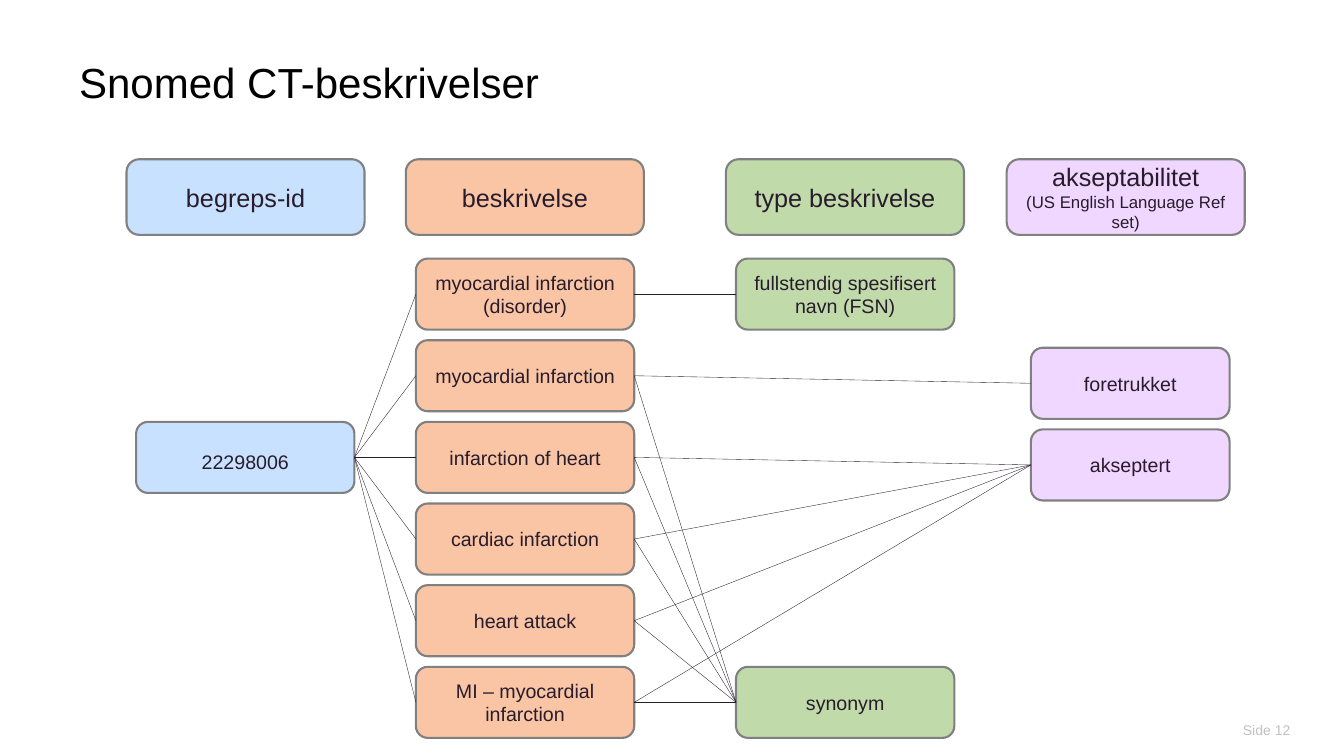
from dataclasses import dataclass

import pptx
from lxml import etree
from pptx.dml.color import RGBColor
from pptx.enum.shapes import MSO_CONNECTOR, MSO_SHAPE
from pptx.enum.text import MSO_ANCHOR, MSO_AUTO_SIZE, PP_ALIGN
from pptx.oxml.ns import qn
from pptx.util import Pt


@dataclass(frozen=True)
class Theme:
    font: str = "Arial"
    title: str = "000000"
    ink: str = "281C2C"
    outline: str = "808080"
    footer: str = "C1C1C1"
    blue: str = "C8E1FF"
    orange: str = "F9C5A5"
    green: str = "C1DAAA"
    purple: str = "EFD7FF"
    title_size: int = 60
    header_size: int = 36
    box_size: int = 28
    note_size: int = 24
    footer_size: int = 20


THEME = Theme()
LEFT, RIGHT = 1, 3
HEADER_TOP, HEADER_WIDTH, HEADER_HEIGHT = 227.5, 340, 108
BOX_WIDTH, NARROW_WIDTH, BOX_HEIGHT = 311.8, 283.7, 101.5
FIRST_ROW_TOP, ROW_PITCH = 369.4, 116.64

DESCRIPTIONS = [
    "myocardial infarction (disorder)",
    "myocardial infarction",
    "infarction of heart",
    "cardiac infarction",
    "heart attack",
    "MI – myocardial infarction",
]


def write_text(frame, text, size=THEME.box_size, color=THEME.ink,
               align=PP_ALIGN.CENTER, line_spacing=None):
    """Fill the first empty paragraph of the frame, or append a new one."""
    paragraph = frame.paragraphs[0] if not frame.text else frame.add_paragraph()
    paragraph.alignment = align
    paragraph.line_spacing = line_spacing
    run = paragraph.add_run()
    run.text = text
    run.font.name = THEME.font
    run.font.size = Pt(size)
    run.font.color.rgb = RGBColor.from_string(color)


def prepare_frame(frame):
    """Wrap, centre vertically and drop the insets of a plain text frame."""
    frame.word_wrap = True
    frame.auto_size = MSO_AUTO_SIZE.NONE
    frame.vertical_anchor = MSO_ANCHOR.MIDDLE
    frame.margin_left = frame.margin_right = 0
    frame.margin_top = frame.margin_bottom = 0


def add_title(slide, text):
    title = slide.shapes.title
    title.left, title.top = Pt(113), Pt(55.4)
    title.width, title.height = Pt(1698.5), Pt(131.8)
    prepare_frame(title.text_frame)
    write_text(title.text_frame, text, size=THEME.title_size, color=THEME.title,
               align=PP_ALIGN.LEFT, line_spacing=0.9)


def add_page_label(slide, text):
    label = slide.shapes.add_textbox(Pt(1730), Pt(1029), Pt(113), Pt(28.8))
    prepare_frame(label.text_frame)
    write_text(label.text_frame, text, size=THEME.footer_size,
               color=THEME.footer, align=PP_ALIGN.RIGHT)


def add_box(slide, text, left, top, fill, width=BOX_WIDTH, height=BOX_HEIGHT,
            size=THEME.box_size):
    box = slide.shapes.add_shape(MSO_SHAPE.ROUNDED_RECTANGLE, Pt(left), Pt(top),
                                 Pt(width), Pt(height))
    box.shadow.inherit = False
    box.fill.solid()
    box.fill.fore_color.rgb = RGBColor.from_string(fill)
    box.line.color.rgb = RGBColor.from_string(THEME.outline)
    box.line.width = Pt(3)
    box.text_frame.word_wrap = True
    box.text_frame.vertical_anchor = MSO_ANCHOR.MIDDLE
    write_text(box.text_frame, text, size=size)
    return box


def add_header(slide, text, left, fill):
    return add_box(slide, text, left, HEADER_TOP, fill, width=HEADER_WIDTH,
                   height=HEADER_HEIGHT, size=THEME.header_size)


def connect(slide, source, target, width=0.5):
    """Join the right side of source to the left side of target."""
    line = slide.shapes.add_connector(MSO_CONNECTOR.STRAIGHT, 0, 0, 0, 0)
    line.begin_connect(source, RIGHT)
    line.end_connect(target, LEFT)
    line.line.color.rgb = RGBColor.from_string(THEME.ink)
    line.line.width = Pt(width)
    properties = line._element.find(qn("p:spPr"))
    etree.SubElement(properties, qn("a:effectLst"))


def main():
    presentation = pptx.Presentation()
    presentation.slide_width, presentation.slide_height = Pt(1919.5), Pt(1080)
    slide = presentation.slides.add_slide(presentation.slide_layouts[5])
    add_title(slide, "Snomed CT-beskrivelser")
    add_page_label(slide, "Side 12")

    add_header(slide, "begreps-id", 180.7, THEME.blue)
    add_header(slide, "beskrivelse", 579.6, THEME.orange)
    add_header(slide, "type beskrivelse", 1036.8, THEME.green)
    acceptability = add_header(slide, "akseptabilitet", 1437.8, THEME.purple)
    write_text(acceptability.text_frame, "(US English Language Ref set)",
               size=THEME.note_size)

    row_tops = [FIRST_ROW_TOP + row * ROW_PITCH for row in range(len(DESCRIPTIONS))]
    concept = add_box(slide, "22298006", 194.4, row_tops[2], THEME.blue)
    concept.text_frame.margin_top = Pt(15)
    descriptions = [add_box(slide, text, 594, top, THEME.orange)
                    for text, top in zip(DESCRIPTIONS, row_tops)]
    full_name = add_box(slide, "fullstendig spesifisert navn (FSN)", 1051.2,
                        row_tops[0], THEME.green)
    synonym = add_box(slide, "synonym", 1051.2, 952.6, THEME.green)
    preferred, accepted = [
        add_box(slide, text, 1472.4, 496.8 + row * ROW_PITCH, THEME.purple,
                width=NARROW_WIDTH)
        for row, text in enumerate(["foretrukket", "akseptert"])
    ]

    for description in descriptions:
        connect(slide, concept, description)
    connect(slide, descriptions[0], full_name, width=1.5)
    for description in descriptions[1:]:
        connect(slide, description, synonym)
    connect(slide, descriptions[1], preferred)
    for description in descriptions[2:]:
        connect(slide, description, accepted)

    presentation.save("out.pptx")


if __name__ == "__main__":
    main()
